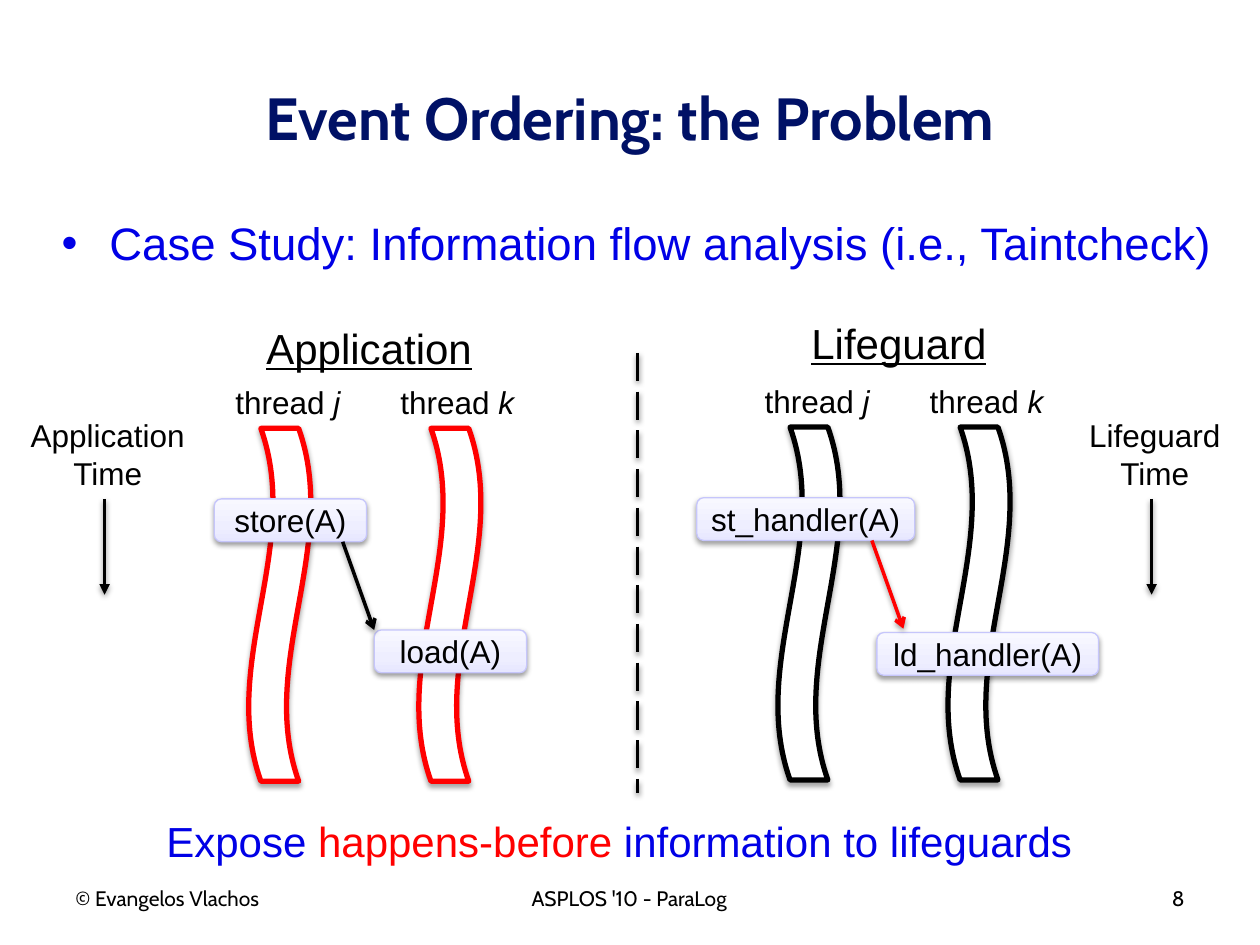
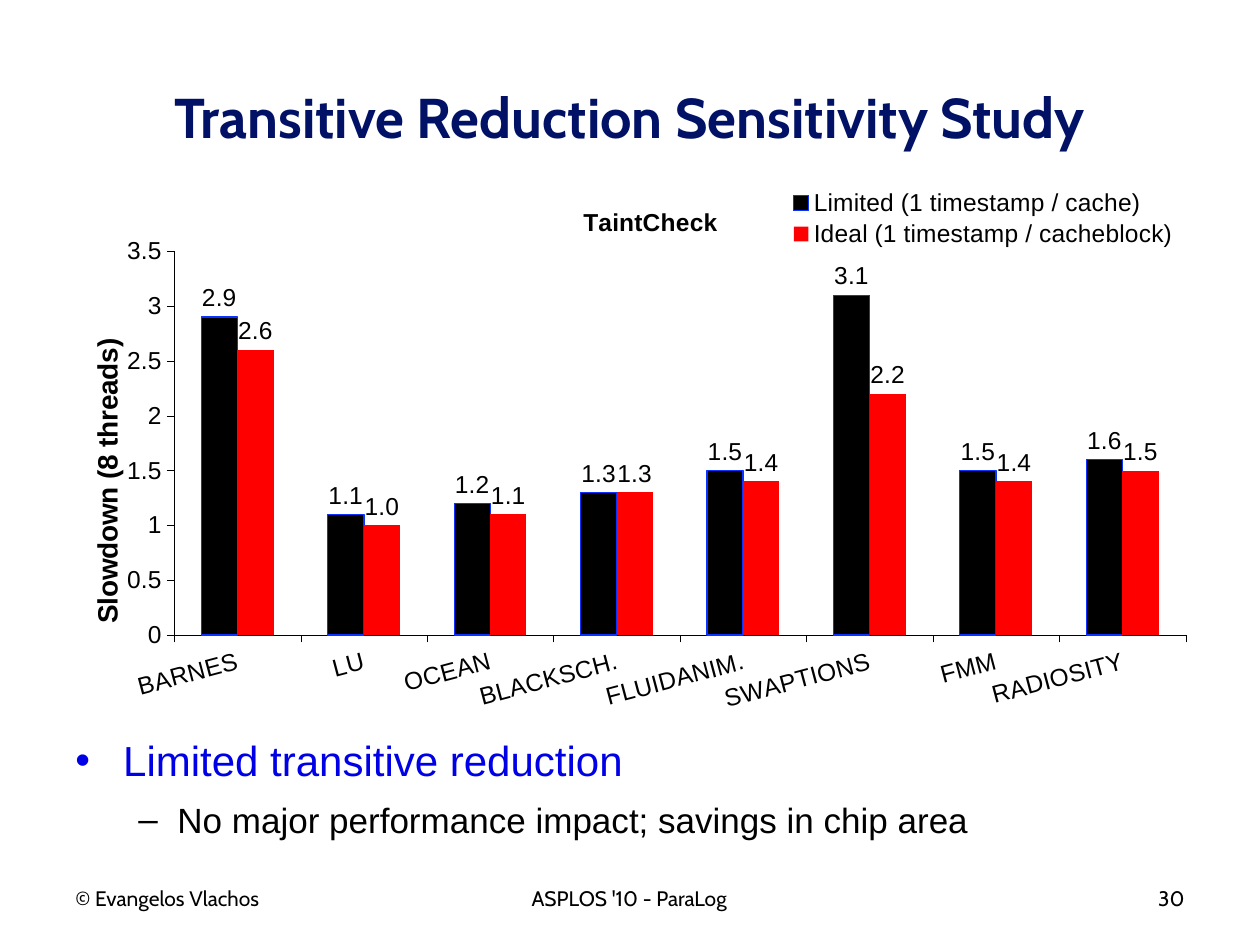
from dataclasses import dataclass
from typing import NamedTuple

from pptx import Presentation
from pptx.chart.data import CategoryChartData
from pptx.dml.color import RGBColor
from pptx.enum.chart import (XL_CHART_TYPE, XL_LABEL_POSITION,
                             XL_LEGEND_POSITION, XL_TICK_MARK)
from pptx.enum.dml import MSO_LINE
from pptx.enum.shapes import MSO_CONNECTOR, MSO_SHAPE
from pptx.enum.text import MSO_ANCHOR, PP_ALIGN
from pptx.oxml import parse_xml
from pptx.oxml.ns import nsdecls
from pptx.util import Pt

LEFT, MID, RIGHT = PP_ALIGN.LEFT, PP_ALIGN.CENTER, PP_ALIGN.RIGHT
TOP, CENTER = MSO_ANCHOR.TOP, MSO_ANCHOR.MIDDLE
WAVE, ROUND = MSO_SHAPE.WAVE, MSO_SHAPE.ROUNDED_RECTANGLE
STRAIGHT, DASH = MSO_CONNECTOR.STRAIGHT, MSO_LINE.LONG_DASH
OUT, ABOVE = XL_TICK_MARK.OUTSIDE, XL_LABEL_POSITION.OUTSIDE_END

SCALE = 9144  # 100 px to the inch
HEX = {"navy": "001166", "blue": "0000E6", "red": "FF0000", "black": "000000",
       "white": "FFFFFF", "edge": "C6C6FB", "rim": "0A33FF"}
SHADE = ((0, "E7E7FF"), (35, "EEEEFF"), (100, "F8F8FF"))
TITLE = {"name": "Cabin", "bold": True}
FOOT = {"name": "Cabin", "size": 12}
BODY = {"name": "Arial", "size": 18}
HEAD = BODY | {"size": 24}


class Box(NamedTuple):
    x: int
    y: int
    w: int
    h: int


class Run(NamedTuple):
    text: str
    form: dict
    hue: str = "black"


class Para(NamedTuple):
    runs: list[Run]
    align: int = LEFT
    bullet: str = ""
    indent: int = 0
    hang: int = 0
    before: float = 0


class Node(NamedTuple):
    text: str
    box: Box


@dataclass
class Panel:
    name: str
    head: Box
    dx: int
    dy: int
    wave: str
    arrow: str
    nodes: tuple[Node, Node]
    clock: Box
    axis: int


PANELS = (
    Panel("Application", Box(200, 251, 186, 50), 0, 0, "red", "black",
          (Node("store(A)", Box(170, 396, 121, 34)),
           Node("load(A)", Box(297, 500, 121, 34))),
          Box(13, 325, 145, 71), 83),
    Panel("Lifeguard", Box(633, 247, 161, 50), 420, -1, "black", "red",
          (Node("st_handler(A)", Box(553, 395, 173, 34)),
           Node("ld_handler(A)", Box(696, 502, 176, 34))),
          Box(854, 325, 125, 71), 914),
)
TESTS = ("BARNES", "LU", "OCEAN", "BLACKSCH.", "FLUIDANIM.", "SWAPTIONS",
         "FMM", "RADIOSITY")
LIMITED = (2.9, 1.1, 1.2, 1.3, 1.5, 3.1, 1.5, 1.6)
IDEAL = (2.6, 1, 1.1, 1.3, 1.4, 2.2, 1.4, 1.5)


def px(*vals: int) -> list[int]:
    return [v * SCALE for v in vals]


def rgb(hue: str) -> RGBColor:
    return RGBColor.from_string(HEX[hue])


def style(font, form: dict, hue: str = "black") -> None:
    for key, val in form.items():
        setattr(font, key, Pt(val) if key == "size" else val)
    font.color.rgb = rgb(hue)


def node(tag: str, attrs: str = "", inner: str = ""):
    return parse_xml(f"<{tag} {nsdecls('a', 'c')} {attrs}>{inner}</{tag}>")


def cast(shape, alpha: int = 38, dist: float = 1.6) -> None:
    """Give a shape or connector a soft shadow straight below it."""
    shape.element.spPr.append(node("a:effectLst", "", (
        f'<a:outerShdw blurRad="{Pt(3.1)}" dist="{Pt(dist)}" dir="5400000" '
        f'rotWithShape="0"><a:srgbClr val="{HEX["black"]}">'
        f'<a:alpha val="{alpha * 1000}"/></a:srgbClr></a:outerShdw>')))


def write(frame, paras: list[Para]) -> None:
    for i, para in enumerate(paras):
        p = frame.add_paragraph() if i else frame.paragraphs[0]
        p.alignment = para.align
        if para.before:
            p.space_before = Pt(para.before)
        if para.bullet:
            prop = p._p.get_or_add_pPr()
            prop.set("marL", str(para.indent * SCALE))
            prop.set("indent", str(-para.hang * SCALE))
            prop.append(node("a:buFont", 'typeface="Arial"'))
            prop.append(node("a:buChar", f'char="{para.bullet}"'))
        for part in para.runs:
            run = p.add_run()
            run.text = part.text
            style(run.font, part.form, part.hue)


def label(slide, box: Box, paras: list[Para], wrap: bool = True,
          anchor: int = TOP) -> None:
    frame = slide.shapes.add_textbox(*px(*box)).text_frame
    frame.word_wrap = wrap
    frame.vertical_anchor = anchor
    write(frame, paras)


def line(slide, start: tuple[int, int], end: tuple[int, int],
         hue: str = "black", tip: str = "", dash: bool = False) -> None:
    link = slide.shapes.add_connector(STRAIGHT, *px(*start, *end))
    link.line.color.rgb = rgb(hue)
    link.line.width = Pt(2)
    if dash:
        link.line.dash_style = DASH
    if tip:
        link.element.xpath(".//a:ln")[0].append(
            node("a:tailEnd", f'type="{tip}"'))
    cast(link)


def wave(slide, x: int, y: int, hue: str) -> None:
    band = slide.shapes.add_shape(WAVE, *px(x, y, 280, 50))
    band.rotation = 90
    band.adjustments[0], band.adjustments[1] = 0.2, 0
    band.fill.solid()
    band.fill.fore_color.rgb = rgb("white")
    band.line.color.rgb = rgb(hue)
    band.line.width = Pt(3)
    cast(band, 35, 1.8)


def event(slide, item: Node) -> None:
    card = slide.shapes.add_shape(ROUND, *px(*item.box))
    stops = "".join(f'<a:gs pos="{at * 1000}"><a:srgbClr val="{tint}"/></a:gs>'
                    for at, tint in SHADE)
    card.element.spPr.append(node(
        "a:gradFill", 'rotWithShape="1"',
        f'<a:gsLst>{stops}</a:gsLst><a:lin ang="16200000" scaled="0"/>'))
    card.line.color.rgb = rgb("edge")
    card.line.width = Pt(0.75)
    cast(card)
    frame = card.text_frame
    frame.margin_left = frame.margin_right = 0
    frame.vertical_anchor = CENTER
    write(frame, [Para([Run(item.text, BODY)], MID)])


def base(deck, title: str, size: int, num: int):
    """Start a blank slide with its title and footers."""
    slide = deck.slides.add_slide(deck.slide_layouts[6])
    label(slide, Box(50, 30, 900, 125),
          [Para([Run(title, TITLE | {"size": size}, "navy")], MID)],
          anchor=CENTER)
    for text, x, w, align in (("© Evangelos Vlachos", 50, 233, LEFT),
                              ("ASPLOS '10 - ParaLog", 158, 683, MID),
                              (str(num), 717, 233, RIGHT)):
        label(slide, Box(x, 698, w, 52), [Para([Run(text, FOOT)], align)])
    return slide


def panel(slide, p: Panel) -> None:
    # Threads and their names
    for name, x, tx, w in (("j", 82, 177, 110), ("k", 217, 308, 116)):
        wave(slide, x + p.dx, 455 + p.dy, p.wave)
        label(slide, Box(tx + p.dx, 299 + p.dy, w, 40),
              [Para([Run("thread ", BODY),
                     Run(name, BODY | {"italic": True})])], wrap=False)
    # Ordered events
    for item in p.nodes:
        event(slide, item)
    line(slide, (272 + p.dx, 430 + p.dy), (297 + p.dx, 500 + p.dy),
         p.arrow, "arrow")
    # Heading and time axis
    label(slide, p.head, [Para([Run(p.name, HEAD | {"underline": True})], MID)],
          wrap=False)
    label(slide, p.clock, [Para([Run(word, BODY)], MID)
                           for word in (p.name, "Time")], wrap=False)
    line(slide, (p.axis, 396), (p.axis, 472), tip="triangle")


def place(part, index: int, inner: bool = False, **spots: float) -> None:
    """Set a manual layout on a chart part."""
    for old in part.xpath("c:layout"):
        part.remove(old)
    marks = '<c:layoutTarget val="inner"/>' if inner else ""
    marks += '<c:xMode val="edge"/><c:yMode val="edge"/>'
    marks += "".join(f'<c:{k} val="{v}"/>' for k, v in spots.items())
    part.insert(index, node(
        "c:layout", "", f"<c:manualLayout>{marks}</c:manualLayout>"))


def heading(owner, text: str, size: int) -> None:
    frame = owner.text_frame
    frame.text = text
    style(frame.paragraphs[0].runs[0].font,
          BODY | {"size": size, "bold": True})


def graph(slide) -> None:
    data = CategoryChartData(number_format="0.0")
    data.categories = TESTS
    data.add_series("Limited (1 timestamp / cache)", LIMITED)
    data.add_series("Ideal (1 timestamp / cacheblock)", IDEAL)
    chart = slide.shapes.add_chart(XL_CHART_TYPE.COLUMN_CLUSTERED,
                                   *px(58, 143, 892, 435), data).chart
    small = BODY | {"size": 14}
    style(chart.font, small)
    heading(chart.chart_title, "TaintCheck", 14)

    # Bars and values
    plot = chart.plots[0]
    plot.vary_by_categories = False
    plot.gap_width, plot.overlap = 150, 0
    for bars, hue in zip(plot.series, ("black", "red")):
        bars.format.fill.solid()
        bars.format.fill.fore_color.rgb = rgb(hue)
        tags = bars.data_labels
        for key, val in {"show_value": True, "number_format": "0.0",
                         "number_format_is_linked": False,
                         "position": ABOVE}.items():
            setattr(tags, key, val)
        style(tags.font, small)
    rim = plot.series[0].format.line
    rim.color.rgb = rgb("rim")
    rim.width = Pt(0.75)

    # Axes
    cat, val = chart.category_axis, chart.value_axis
    for axis in (cat, val):
        axis.has_major_gridlines = False
        axis.major_tick_mark = OUT
        axis.format.line.color.rgb = rgb("black")
        axis.format.line.width = Pt(0.06)
        style(axis.tick_labels.font, small)
    val.minimum_scale, val.maximum_scale, val.major_unit = 0, 3.5, 0.5
    val.tick_labels.number_format = "General"
    val.tick_labels.number_format_is_linked = False
    heading(val.axis_title, "Slowdown (8 threads)", 16)

    # Legend and placing
    chart.has_legend = True
    chart.legend.position = XL_LEGEND_POSITION.RIGHT
    chart.legend.include_in_layout = False
    style(chart.legend.font, small)
    root = chart.element
    root.xpath(".//c:catAx/c:txPr/a:bodyPr")[0].set("rot", "-900000")
    turn = root.xpath(".//c:valAx/c:title//a:bodyPr")[0]
    turn.set("rot", "-5400000")
    turn.set("vert", "horz")
    for query, index, inner, spots in (
            ("c:chart/c:title", 1, False, {"x": 0.45, "y": 0.04}),
            (".//c:valAx/c:title", 1, False, {"x": 0.01, "y": 0.28}),
            (".//c:legend", 1, False,
             {"x": 0.63, "y": 0.01, "w": 0.36, "h": 0.12}),
            (".//c:plotArea", 0, True,
             {"x": 0.09, "y": 0.13, "w": 0.9, "h": 0.7})):
        place(root.xpath(query)[0], index, inner, **spots)


def main() -> None:
    deck = Presentation()
    deck.slide_width, deck.slide_height = px(1000, 750)

    # Event ordering
    slide = base(deck, "Event Ordering: the Problem", 34, 8)
    case = "Case Study: Information flow analysis (i.e., Taintcheck)"
    label(slide, Box(39, 166, 947, 91),
          [Para([Run(case, BODY | {"size": 26}, "blue")], LEFT, "•", 38, 38)])
    for side in PANELS:
        panel(slide, side)
    line(slide, (506, 280), (506, 629), dash=True)
    label(slide, Box(40, 642, 903, 53),
          [Para([Run("Expose ", HEAD, "blue"),
                 Run("happens-before ", HEAD, "red"),
                 Run("information to lifeguards", HEAD, "blue")], MID)])

    # Sensitivity study
    slide = base(deck, "Transitive Reduction Sensitivity Study", 32, 30)
    graph(slide)
    note = "No major performance impact; savings in chip area"
    label(slide, Box(50, 578, 900, 120), [
        Para([Run("Limited transitive reduction", HEAD, "blue")],
             LEFT, "•", 38, 38),
        Para([Run(note, BODY | {"size": 20})], LEFT, "–", 81, 31, 7.8)])
    deck.save("out.pptx")


if __name__ == "__main__":
    main()
